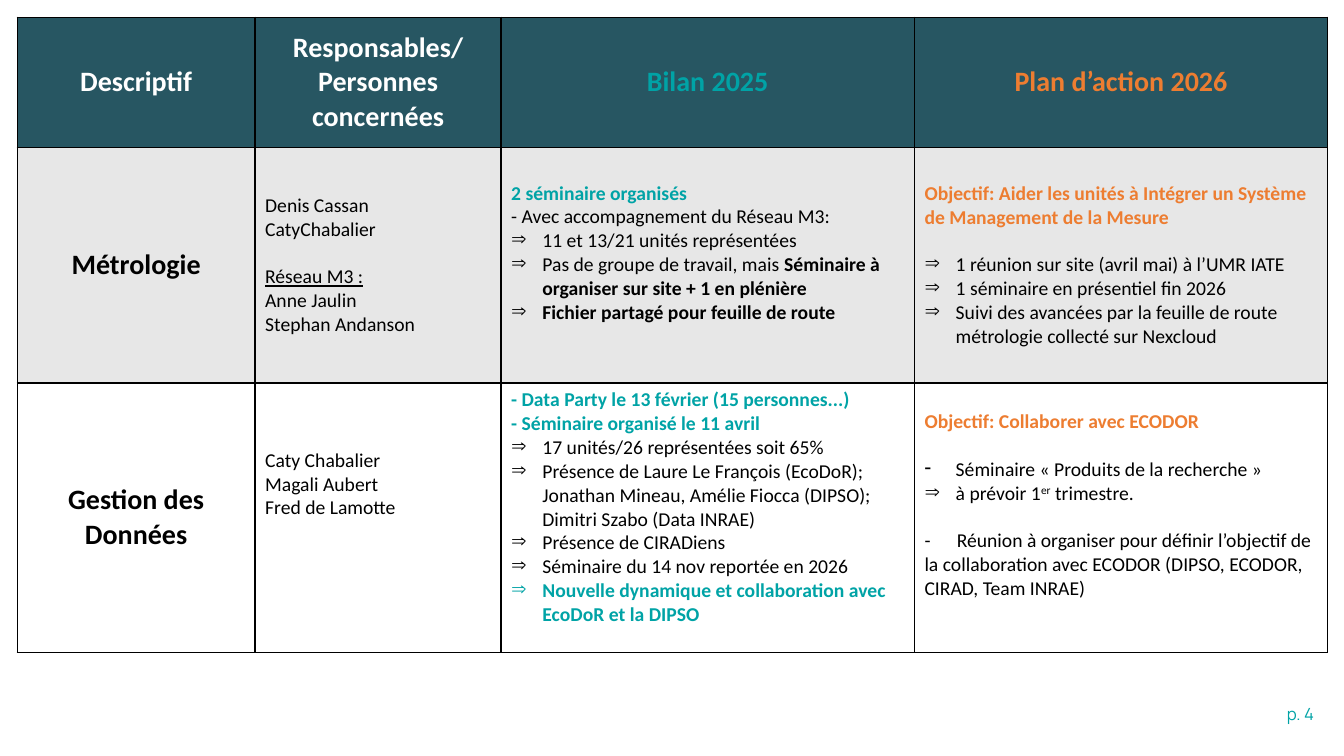
"""Build the slide with the 2025 review and 2026 action plan table."""
import pptx
import pptx.util
import pptx.dml.color
import pptx.enum.text
import pptx.oxml
import pptx.oxml.ns

Inches = pptx.util.Inches
Pt = pptx.util.Pt
Align = pptx.enum.text.PP_ALIGN
COLORS = {
    "header": "275662",
    "band": "E7E7E7",
    "white": "FFFFFF",
    "black": "000000",
    "teal": "00A3A6",
    "orange": "ED7D31",
}
GAP = 17
ARROW = {"bullet": "⇒"}
TEAL = {"color": "teal", "bold": True}
ORANGE = {"color": "orange", "bold": True}
TITLE = {"size": 20, "bold": True, "align": Align.CENTER}
HEADING = {**TITLE, "color": "white"}


def add_xml(parent, xml):
    """Append an element written in the drawing namespace."""
    tag, rest = xml.split(" ", 1)
    parent.append(pptx.oxml.parse_xml(f"{tag} {pptx.oxml.ns.nsdecls('a')} {rest}"))


def write_paragraph(paragraph, text, style):
    """Write text, or a list of (text, run style) pairs, in one style."""
    color = COLORS[style.get("color", "black")]
    paragraph.alignment = style.get("align", Align.LEFT)
    if "before" in style:
        paragraph.space_before = Pt(style["before"])
    properties = paragraph._p.get_or_add_pPr()
    if "bullet" in style:
        properties.set("marL", str(Inches(0.31)))
        properties.set("indent", str(-Inches(0.31)))
        add_xml(properties, f'<a:buClr ><a:srgbClr val="{color}"/></a:buClr>')
        add_xml(properties, f'<a:buChar char="{style["bullet"]}"/>')
    if "tab" in style:
        add_xml(properties, f'<a:tabLst ><a:tab pos="{Inches(style["tab"])}" algn="l"/></a:tabLst>')
    font = paragraph.font
    font.name = style.get("font", "Calibri")
    font.size = Pt(style.get("size", 14))
    font.color.rgb = pptx.dml.color.RGBColor.from_string(color)
    if not isinstance(text, list):
        font.bold = style.get("bold", False)
        text = [(text, {})]
    for words, run_style in text:
        run = paragraph.add_run()
        run.text = words
        if "bold" in run_style:
            run.font.bold = run_style["bold"]
        if "baseline" in run_style:
            run.font._element.set("baseline", run_style["baseline"])
    if style.get("underline"):
        font.underline = True


presentation = pptx.Presentation()
presentation.slide_width = Inches(13.33)
presentation.slide_height = Inches(7.5)
slide = presentation.slides.add_slide(presentation.slide_layouts[6])

rows = [
    [
        [("Descriptif", HEADING)],
        [("Responsables/", HEADING), ("Personnes concernées", HEADING)],
        [("Bilan 2025", {**TITLE, "color": "teal"})],
        [("Plan d’action 2026", {**TITLE, "color": "orange"})],
    ],
    [
        [("Métrologie", TITLE)],
        [
            ("Denis Cassan", {}),
            ("CatyChabalier", {}),
            ("Réseau M3 :", {"underline": True, "before": GAP}),
            ("Anne Jaulin", {}),
            ("Stephan Andanson", {}),
        ],
        [
            ("2 séminaire organisés", TEAL),
            ("- Avec accompagnement du Réseau M3:", {}),
            ("11 et 13/21 unités représentées", ARROW),
            ([("Pas de groupe de travail, mais ", {"bold": False}),
              ("Séminaire à organiser sur site + 1 en plénière", {"bold": True})], ARROW),
            ("Fichier partagé pour feuille de route", {**ARROW, "bold": True}),
        ],
        [
            ("Objectif: Aider les unités à Intégrer un Système de Management de la Mesure", ORANGE),
            ("1 réunion sur site (avril mai) à l’UMR IATE", {**ARROW, "before": GAP}),
            ("1 séminaire en présentiel fin 2026", ARROW),
            ("Suivi des avancées par la feuille de route métrologie collecté sur Nexcloud", ARROW),
        ],
    ],
    [
        [("Gestion des Données", TITLE)],
        [("Caty Chabalier", {}), ("Magali Aubert", {}), ("Fred de Lamotte", {})],
        [
            ("- Data Party le 13 février (15 personnes...)", TEAL),
            ("- Séminaire organisé le 11 avril", TEAL),
            ("17 unités/26 représentées soit 65%", ARROW),
            ("Présence de Laure Le François (EcoDoR); Jonathan Mineau, Amélie Fiocca (DIPSO); "
             "Dimitri Szabo (Data INRAE)", ARROW),
            ("Présence de CIRADiens", ARROW),
            ("Séminaire du 14 nov reportée en 2026", ARROW),
            ("Nouvelle dynamique et collaboration avec EcoDoR et la DIPSO", {**ARROW, **TEAL}),
        ],
        [
            ("Objectif: Collaborer avec ECODOR", ORANGE),
            ("Séminaire « Produits de la recherche »", {"bullet": "-", "before": GAP}),
            ([("à prévoir 1", {}), ("er", {"baseline": "30000"}), (" trimestre.", {})], ARROW),
            ("-\tRéunion à organiser pour définir l’objectif de la collaboration avec ECODOR "
             "(DIPSO, ECODOR, CIRAD, Team INRAE)", {"before": GAP, "tab": 0.32}),
        ],
    ],
]
column_widths = [2.36, 2.44, 4.1, 4.1]
row_heights = [1.29, 2.34, 2.67]
row_fills = ["header", "band", "white"]
bottom_margins = {(1, 2): 0.29, (2, 1): 0.71, (2, 2): 0.25, (2, 3): 0.29}

table = slide.shapes.add_table(
    len(rows), len(column_widths), Inches(0.17), Inches(0.17),
    Inches(sum(column_widths)), Inches(sum(row_heights))).table
table.first_row = False
table.horz_banding = False
for column, width in zip(table.columns, column_widths):
    column.width = Inches(width)
for row, height in zip(table.rows, row_heights):
    row.height = Inches(height)

for row_index, row_cells in enumerate(rows):
    for column_index, paragraphs in enumerate(row_cells):
        cell = table.cell(row_index, column_index)
        cell.vertical_anchor = pptx.enum.text.MSO_ANCHOR.MIDDLE
        cell.margin_left = cell.margin_right = Inches(0.1)
        cell.margin_top = Inches(0.05)
        cell.margin_bottom = Inches(bottom_margins.get((row_index, column_index), 0.05))
        for side in "LRTB":
            add_xml(cell._tc.get_or_add_tcPr(),
                    f'<a:ln{side} w="{Pt(1)}"><a:solidFill><a:srgbClr val="{COLORS["black"]}"/>'
                    f'</a:solidFill></a:ln{side}>')
        cell.fill.solid()
        cell.fill.fore_color.rgb = pptx.dml.color.RGBColor.from_string(COLORS[row_fills[row_index]])
        for index, (text, style) in enumerate(paragraphs):
            frame = cell.text_frame
            paragraph = frame.add_paragraph() if index else frame.paragraphs[0]
            write_paragraph(paragraph, text, style)

page_number = slide.shapes.add_textbox(Inches(10.85), Inches(6.93), Inches(2.28), Inches(0.32))
page_number.text_frame.word_wrap = True
write_paragraph(page_number.text_frame.paragraphs[0], "p. 4",
                {"size": 12, "font": "Manrope", "color": "teal", "align": Align.RIGHT})

presentation.save("out.pptx")
